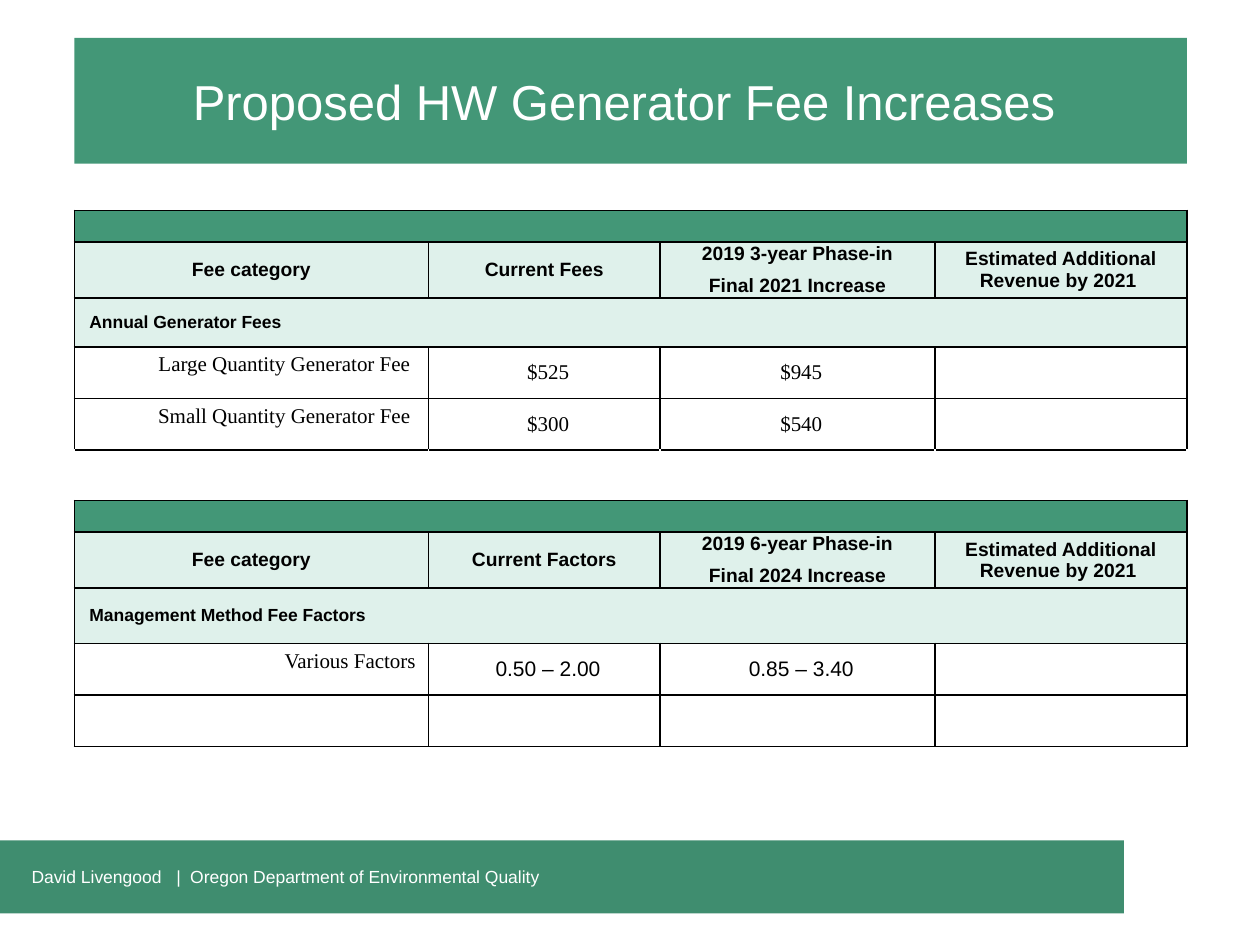
from lxml import etree
from pptx import Presentation
from pptx.dml.color import RGBColor
from pptx.enum import shapes, text
from pptx.oxml import ns
from pptx.util import Inches, Pt

HUES = {"head": "439777", "foot": "3F8D6F", "pale": "DFF1EB",
        "white": "FFFFFF", "black": "000000"}
LEFT, MID, RIGHT = text.PP_ALIGN.LEFT, text.PP_ALIGN.CENTER, text.PP_ALIGN.RIGHT
ARIAL, TIMES = "Arial", "Times New Roman"
LOOKS = {
    "title": {"size": 28, "name": ARIAL, "bold": False, "hue": "white", "align": MID},
    "foot": {"size": 10, "name": ARIAL, "bold": False, "hue": "white", "align": LEFT},
    "head": {"size": 11, "name": ARIAL, "bold": True, "hue": "black", "align": MID, "after": 6},
    "group": {"size": 10, "name": ARIAL, "bold": True, "hue": "black", "align": LEFT,
              "after": 6, "indent": 0.11},
    "label": {"size": 12, "name": TIMES, "bold": False, "hue": "black", "align": RIGHT},
    "fee": {"size": 12, "name": TIMES, "bold": False, "hue": "black", "align": MID,
            "after": 6, "indent": 0.06},
    "factor": {"size": 12, "name": ARIAL, "bold": False, "hue": "black", "align": MID,
               "after": 6, "indent": 0.06},
}


def write(frame, words, look):
    fmt = LOOKS[look]
    frame.text = words
    for para in frame.paragraphs:
        para.alignment = fmt["align"]
        para.space_after = Pt(fmt.get("after", 0))
        if "indent" in fmt:
            props = para._p.get_or_add_pPr()
            props.set("marL", str(Inches(fmt["indent"])))
            props.set("indent", "0")
        for run in para.runs:
            run.font.size = Pt(fmt["size"])
            for key in ("name", "bold"):
                setattr(run.font, key, fmt[key])
            run.font.color.rgb = RGBColor.from_string(HUES[fmt["hue"]])


def edge(cell, sides):
    props = cell._tc.get_or_add_tcPr()
    for spot, side in enumerate(sides):
        line = etree.Element(ns.qn("a:ln" + side), w=str(Pt(1)))
        fill = etree.SubElement(line, ns.qn("a:solidFill"))
        etree.SubElement(fill, ns.qn("a:srgbClr"), val=HUES["black"])
        props.insert(spot, line)


deck = Presentation()
deck.slide_width, deck.slide_height = Inches(10), Inches(7.5)
slide = deck.slides.add_slide(deck.slide_layouts[6])

BARS = [
    ("title", "head", (0.59, 0.3, 8.83, 1), 0.1, "Proposed HW Generator Fee Increases "),
    ("foot", "foot", (0, 6.67, 8.92, 0.58), 0.25,
     "David Livengood\t|\tOregon Department of Environmental Quality"),
]
for look, hue, box, inset, words in BARS:
    bar = slide.shapes.add_shape(shapes.MSO_SHAPE.RECTANGLE, *map(Inches, box))
    bar.shadow.inherit = False
    bar.fill.solid()
    bar.fill.fore_color.rgb = RGBColor.from_string(HUES[hue])
    bar.line.fill.background()
    frame = bar.text_frame
    frame.word_wrap = True
    frame.vertical_anchor = text.MSO_ANCHOR.MIDDLE
    frame.margin_left = Inches(inset)
    write(frame, words, look)

stops = etree.SubElement(frame.paragraphs[0]._p.get_or_add_pPr(), ns.qn("a:tabLst"))
for stop in (1.15, 1.26):
    etree.SubElement(stops, ns.qn("a:tab"), pos=str(Inches(stop)), algn="l")

GAIN = "Estimated Additional Revenue by 2021 "
ROWS = [
    (0.25, "band", [""]),
    (0.44, "head", ["Fee category", "Current Fees",
                    "2019 3-year Phase-in\nFinal 2021 Increase", GAIN]),
    (0.39, "group", ["Annual Generator Fees"]),
    (0.41, "fee", ["Large Quantity Generator Fee ", "$525", "$945", ""]),
    (0.41, "fee", ["Small Quantity Generator Fee ", "$300", "$540", ""]),
    (0.4, "gap", [""] * 4),
    (0.25, "band", [""]),
    (0.44, "head", ["Fee category", "Current Factors",
                    "2019 6-year Phase-in\nFinal 2024 Increase", GAIN]),
    (0.44, "group", ["Management Method Fee Factors"]),
    (0.41, "factor", ["Various Factors", "0.50 – 2.00", "0.85 – 3.40", ""]),
    (0.41, "factor", [""] * 4),
]
COLS = [2.81, 1.84, 2.18, 2]
FILLS = {"band": "head", "head": "pale", "group": "pale"}
SIDES = ("marg" + "in_" + side for side in ("left", "right", "top", "bottom"))
SIDES = list(SIDES)

high = sum(row[0] for row in ROWS)
grid = slide.shapes.add_table(len(ROWS), len(COLS), Inches(0.59), Inches(1.67),
                              Inches(sum(COLS)), Inches(high)).table
grid.first_row = grid.horz_banding = False
for col, wide in zip(grid.columns, COLS):
    col.width = Inches(wide)

for r, (tall, kind, words) in enumerate(ROWS):
    grid.rows[r].height = Inches(tall)
    if len(words) == 1:
        grid.cell(r, 0).merge(grid.cell(r, len(COLS) - 1))
    for c in range(len(COLS)):
        cell = grid.cell(r, c)
        cell.fill.solid()
        cell.fill.fore_color.rgb = RGBColor.from_string(HUES[FILLS.get(kind, "white")])
        edge(cell, "TB" if kind == "gap" else "LRTB")
        look = "label" if c == 0 and kind in ("fee", "factor") else kind
        if look != "label":
            cell.vertical_anchor = text.MSO_ANCHOR.MIDDLE
            for side in SIDES:
                setattr(cell, side, Inches(0.01))
        if c < len(words) and words[c]:
            write(cell.text_frame, words[c], look)
        else:
            para = cell.text_frame.paragraphs[0]._p
            etree.SubElement(para, ns.qn("a:endParaRPr"), sz="1000")

deck.save("out.pptx")
